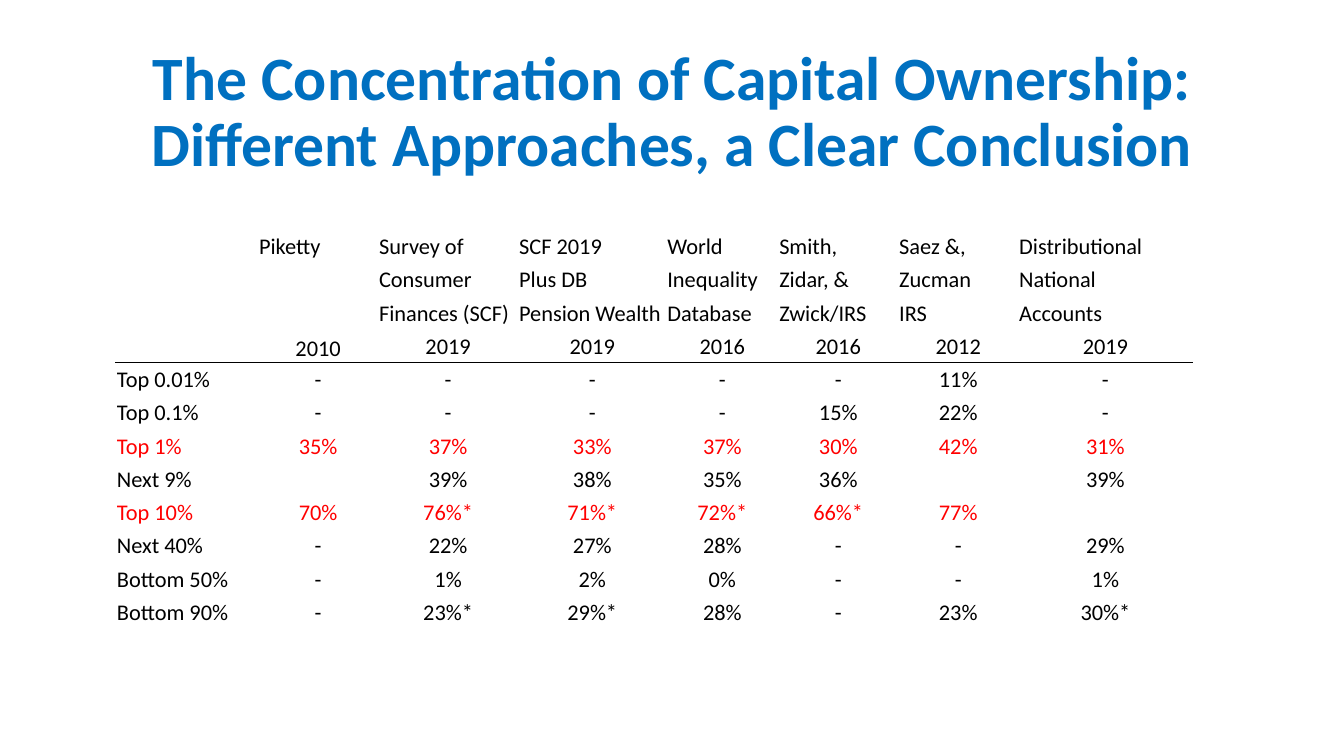
from dataclasses import dataclass

from lxml import etree
from pptx import Presentation
from pptx.dml.color import RGBColor
from pptx.enum.text import MSO_ANCHOR, PP_ALIGN
from pptx.oxml.ns import qn
from pptx.util import Pt

PX = 9144  # EMU in one px, 100 px to the inch
LEFT, CENTER = PP_ALIGN.LEFT, PP_ALIGN.CENTER
MIDDLE, BOTTOM = MSO_ANCHOR.MIDDLE, MSO_ANCHOR.BOTTOM


@dataclass(frozen=True)
class Theme:
    font: str = "Calibri"
    title: str = "0070C0"
    body: str = "000000"
    accent: str = "FF0000"
    rule: str = "000000"
    title_size: int = 44
    body_size: int = 16
    rule_size: int = 1


THEME = Theme()
TITLE = "The Concentration of Capital Ownership: Different Approaches, a Clear Conclusion"
COLS = [141, 119, 139, 147, 111, 119, 119, 173]
ROW = 33
YEARS = 3  # index of the row of years, ruled off below
RED = ("Top 1%", "Top 10%")
ROWS = [
    ["", "Piketty", "Survey of", "SCF 2019", "World", "Smith,", "Saez &,", "Distributional"],
    ["", "", "Consumer", "Plus DB", "Inequality", "Zidar, &", "Zucman", "National"],
    ["", "", "Finances (SCF)", "Pension Wealth", "Database", "Zwick/IRS", "IRS", "Accounts"],
    ["", "2010", "2019", "2019", "2016", "2016", "2012", "2019"],
    ["Top 0.01%", "-", "-", "-", "-", "-", "11%", "-"],
    ["Top 0.1%", "-", "-", "-", "-", "15%", "22%", "-"],
    ["Top 1%", "35%", "37%", "33%", "37%", "30%", "42%", "31%"],
    ["Next 9%", "", "39%", "38%", "35%", "36%", "", "39%"],
    ["Top 10%", "70%", "76%*", "71%*", "72%*", "66%*", "77%", ""],
    ["Next 40%", "-", "22%", "27%", "28%", "-", "-", "29%"],
    ["Bottom 50%", "-", "1%", "2%", "0%", "-", "-", "1%"],
    ["Bottom 90%", "-", "23%*", "29%*", "28%", "-", "23%", "30%*"],
]


def px(*lengths):
    return [n * PX for n in lengths]


def write(para, text, size, color, align, bold=False):
    para.text = text
    para.alignment = align
    font = para.font
    font.name, font.size, font.bold = THEME.font, Pt(size), bold
    font.color.rgb = RGBColor.from_string(color)


def add_title(slide):
    frame = slide.shapes.add_textbox(*px(92, 40, 1150, 145)).text_frame
    frame.word_wrap = True
    frame.vertical_anchor = MIDDLE
    para = frame.paragraphs[0]
    write(para, TITLE, THEME.title_size, THEME.title, CENTER, bold=True)
    para.line_spacing = 0.9


def add_rule(cell, side):
    """Draw one border of a cell; side is lnT or lnB."""
    line = etree.Element(qn("a:" + side), w=str(Pt(THEME.rule_size)))
    fill = etree.SubElement(line, qn("a:solidFill"))
    etree.SubElement(fill, qn("a:srgbClr"), val=THEME.rule)
    cell._tc.get_or_add_tcPr().insert(0, line)


def fill_cell(cell, text, color, align, anchor):
    cell.fill.background()
    cell.margin_left = cell.margin_top = cell.margin_right = PX
    cell.margin_bottom = 0
    cell.vertical_anchor = anchor
    write(cell.text_frame.paragraphs[0], text, THEME.body_size, color, align)


def add_grid(slide):
    box = px(115, 228, sum(COLS), ROW * len(ROWS))
    table = slide.shapes.add_table(len(ROWS), len(COLS), *box).table
    table.first_row = table.horz_banding = False
    for col, width in zip(table.columns, COLS):
        col.width = width * PX
    for r, texts in enumerate(ROWS):
        table.rows[r].height = ROW * PX
        color = THEME.accent if texts[0] in RED else THEME.body
        for c, text in enumerate(texts):
            cell = table.cell(r, c)
            align = CENTER if c and r >= YEARS else LEFT
            anchor = BOTTOM if (r, c) == (YEARS, 1) else MIDDLE
            fill_cell(cell, text, color, align, anchor)
            if r == YEARS:
                add_rule(cell, "lnB")
            elif r == YEARS + 1:
                add_rule(cell, "lnT")


def main():
    deck = Presentation()
    deck.slide_width, deck.slide_height = px(1333, 750)
    slide = deck.slides.add_slide(deck.slide_layouts[6])
    add_title(slide)
    add_grid(slide)
    deck.save("out.pptx")


if __name__ == "__main__":
    main()
